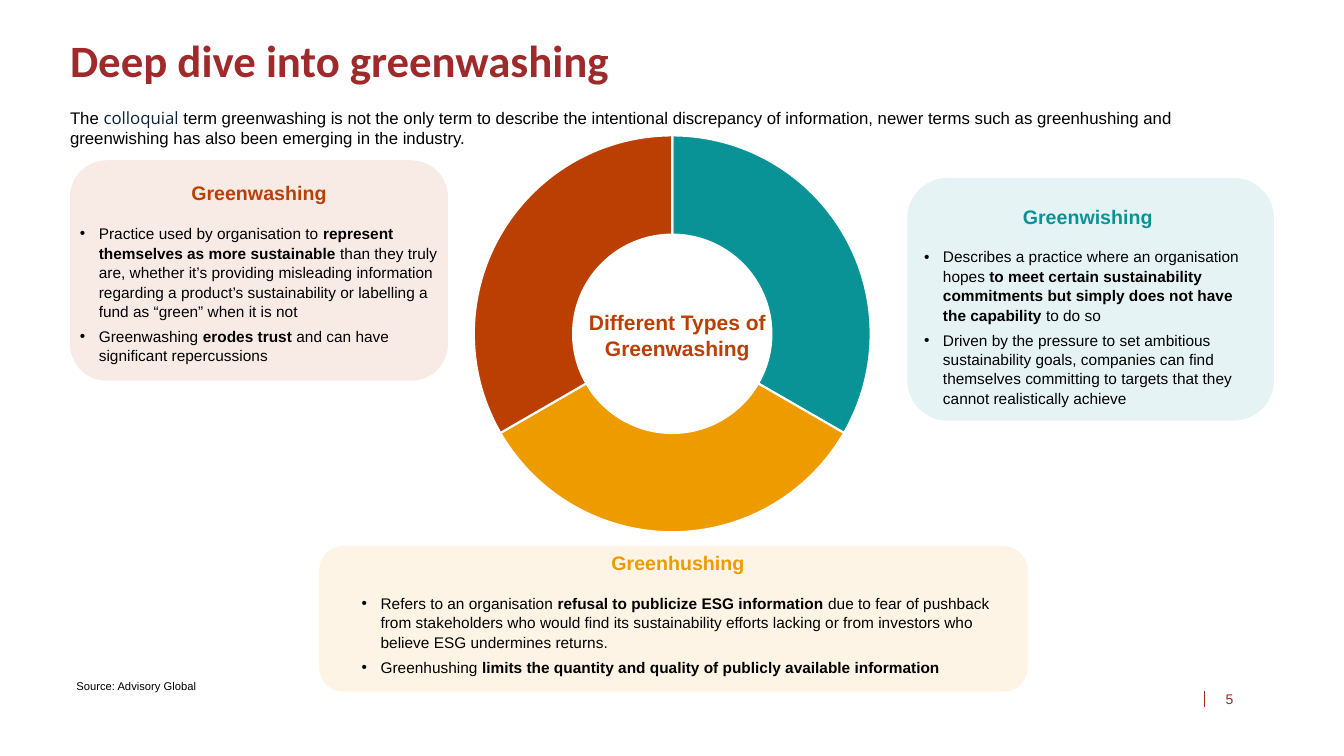
import pptx
import pptx.chart.data
import pptx.dml.color
import pptx.enum.chart
import pptx.enum.shapes
import pptx.enum.text
import pptx.oxml
import pptx.util
from lxml import etree

Pt = pptx.util.Pt
ALIGN = pptx.enum.text.PP_ALIGN
ANCHOR = pptx.enum.text.MSO_ANCHOR
NS = pptx.oxml.ns.qn

COLORS = {
    "red": "9E2A2B",
    "rust": "BB3E03",
    "teal": "0A9396",
    "amber": "EE9B00",
    "navy": "0C233C",
    "black": "000000",
    "white": "FFFFFF",
}

# Each term: colour, panel box, text box inside the panel, bullets of (text, bold) runs
TERMS = {
    "Greenwashing": ("rust", (50, 114.5, 270, 157.5), (0, 11.5, 270, 135), [
        [("Practice used by organisation to ", False),
         ("represent themselves as more sustainable", True),
         (" than they truly are, whether it’s providing misleading information regarding "
          "a product’s sustainability or labelling a fund as “green” when it is not", False)],
        [("Greenwashing ", False), ("erodes trust ", True),
         ("and can have significant repercussions", False)],
    ]),
    "Greenhushing": ("amber", (228, 390, 506, 104), (23.3, 0, 466, 95), [
        [("Refers to an organisation ", False),
         ("refusal to publicize ESG information ", True),
         ("due to fear of pushback from stakeholders who would find its sustainability efforts "
          "lacking or from investors who believe ESG undermines returns.", False)],
        [("Greenhushing ", False),
         ("limits the quantity and quality of publicly available information", True)],
    ]),
    "Greenwishing": ("teal", (648, 127, 262, 173.5), (5, 15.5, 248, 148), [
        [("Describes a practice where an organisation hopes ", False),
         ("to meet certain sustainability commitments but simply does not have the capability",
          True),
         (" to do so", False)],
        [("Driven by the pressure to set ambitious sustainability goals, companies can find "
          "themselves committing to targets that they cannot realistically achieve", False)],
    ]),
}


def rgb(color):
    return pptx.dml.color.RGBColor.from_string(COLORS[color])


def style(font, size, color, bold=False, name="Arial"):
    font.name, font.size, font.bold = name, Pt(size), bold
    font.color.rgb = rgb(color)


def add_frame(slide, box, inset=(0, 0), anchor=ANCHOR.TOP):
    """Add a wrapping text box with (horizontal, vertical) insets; return its text frame."""
    frame = slide.shapes.add_textbox(*map(Pt, box)).text_frame
    frame.word_wrap = True
    frame.vertical_anchor = anchor
    frame.margin_left = frame.margin_right = Pt(inset[0])
    frame.margin_top = frame.margin_bottom = Pt(inset[1])
    return frame


def add_label(slide, box, text, size, color, bold=False, name="Arial", align=ALIGN.LEFT,
              spacing=1.0, **frame_options):
    paragraph = add_frame(slide, box, **frame_options).paragraphs[0]
    paragraph.text = text
    paragraph.alignment = align
    paragraph.line_spacing = spacing
    style(paragraph.font, size, color, bold, name)


def add_intro(slide, box):
    paragraph = add_frame(slide, box).paragraphs[0]
    style(paragraph.font, 12, "black")
    for text, color, name in [
        ("The ", "black", "Arial"),
        ("colloquial", "navy", "Open Sans"),
        (" term greenwashing is not the only term to describe the intentional discrepancy of "
         "information, newer terms such as greenhushing and greenwishing has also been emerging "
         "in the industry.", "black", "Arial"),
    ]:
        run = paragraph.add_run()
        run.text = text
        style(run.font, 12, color, name=name)


def add_ring(slide, box):
    """Add the three-part ring with its caption in the middle."""
    left, top, width, height = box
    data = pptx.chart.data.CategoryChartData()
    data.categories = ["1", "2", "3"]
    data.add_series("Series 1", (33, 33, 33))
    chart = slide.shapes.add_chart(
        pptx.enum.chart.XL_CHART_TYPE.DOUGHNUT, *map(Pt, box), data).chart
    chart.has_legend = chart.has_title = False
    style(chart.font, 10, "black")
    plot = chart.plots[0]
    plot.vary_by_categories = False
    for index, color in enumerate(["teal", "amber", "rust"]):
        part = plot.series[0].points[index].format
        part.fill.solid()
        part.fill.fore_color.rgb = rgb(color)
        part.line.color.rgb = rgb("white")
        part.line.width = Pt(1.5)
    ring = plot._element
    ring.find(NS("c:holeSize")).set("val", "75")

    diameter = 283.5
    plot_area = ring.getparent()
    for old in plot_area.findall(NS("c:layout")):
        plot_area.remove(old)
    layout = etree.Element(NS("c:layout"))
    plot_area.insert(0, layout)
    manual = etree.SubElement(layout, NS("c:manualLayout"))
    w, h = diameter / width, diameter / height
    for tag, value in [("layoutTarget", "inner"), ("xMode", "edge"), ("yMode", "edge"),
                       ("x", (1 - w) / 2), ("y", (1 - h) / 2), ("w", w), ("h", h)]:
        etree.SubElement(manual, NS("c:" + tag)).set("val", str(value))

    add_label(slide, (left + 125.3, top + 116, 211.7, 72), "Different Types of Greenwashing",
              15, "rust", bold=True, align=ALIGN.CENTER, spacing=1.05,
              inset=(4.5, 4.5), anchor=ANCHOR.MIDDLE)


def add_bullet(paragraph, indent=13.5):
    properties = paragraph._p.get_or_add_pPr()
    properties.set("marL", str(Pt(indent)))
    properties.set("indent", str(-Pt(indent)))
    etree.SubElement(properties, NS("a:buFont")).set("typeface", "Arial")
    etree.SubElement(properties, NS("a:buChar")).set("char", "•")


def add_term(slide, box, term, color, text_box, bullets):
    """Add a tinted panel with a heading and bullets; text_box is relative to box."""
    panel = slide.shapes.add_shape(
        pptx.enum.shapes.MSO_SHAPE.ROUNDED_RECTANGLE, *map(Pt, box))
    panel.shadow.inherit = False
    panel.line.fill.background()
    panel.fill.solid()
    panel.fill.fore_color.rgb = rgb(color)
    tint = panel._element.spPr.find(".//" + NS("a:srgbClr"))
    etree.SubElement(tint, NS("a:alpha")).set("val", "10000")

    left, top, width, height = text_box
    frame = add_frame(slide, (box[0] + left, box[1] + top, width, height), inset=(7.2, 3.6))
    heading = frame.paragraphs[0]
    heading.text = term
    heading.alignment = ALIGN.CENTER
    heading.space_after = Pt(13.3)
    style(heading.font, 14, color, bold=True)
    for runs in bullets:
        paragraph = frame.add_paragraph()
        paragraph.line_spacing = 1.05
        paragraph.space_after = Pt(4)
        add_bullet(paragraph)
        style(paragraph.font, 11, "black")
        for text, bold in runs:
            run = paragraph.add_run()
            run.text = text
            run.font.bold = bold


def add_page_number(slide, box, number):
    left, top, width, height = box
    rule = slide.shapes.add_connector(
        pptx.enum.shapes.MSO_CONNECTOR.STRAIGHT, Pt(left), Pt(top), Pt(left), Pt(top + height))
    rule.line.color.rgb = rgb("red")
    rule.line.width = Pt(0.5)
    etree.SubElement(rule._element.spPr, NS("a:effectLst"))
    add_label(slide, box, number, 10, "red", align=ALIGN.RIGHT, anchor=ANCHOR.BOTTOM)


def main():
    deck = pptx.Presentation()
    deck.slide_width, deck.slide_height = Pt(960), Pt(540)
    slide = deck.slides.add_slide(deck.slide_layouts[6])
    add_label(slide, (50, 34, 868, 42), "Deep dive into greenwashing", 32, "red",
              bold=True, name="Calibri", spacing=0.7)
    add_ring(slide, (252.7, 87, 455, 303))
    for term, (color, box, text_box, bullets) in TERMS.items():
        add_term(slide, box, term, color, text_box, bullets)
    add_intro(slide, (50, 77, 860, 26))
    add_label(slide, (50, 485, 171, 10), "Source: Advisory Global", 8, "black",
              inset=(4.5, 4.5), anchor=ANCHOR.MIDDLE)
    add_page_number(slide, (860.5, 493.5, 20.5, 11.5), "5")
    deck.save("out.pptx")


if __name__ == "__main__":
    main()
